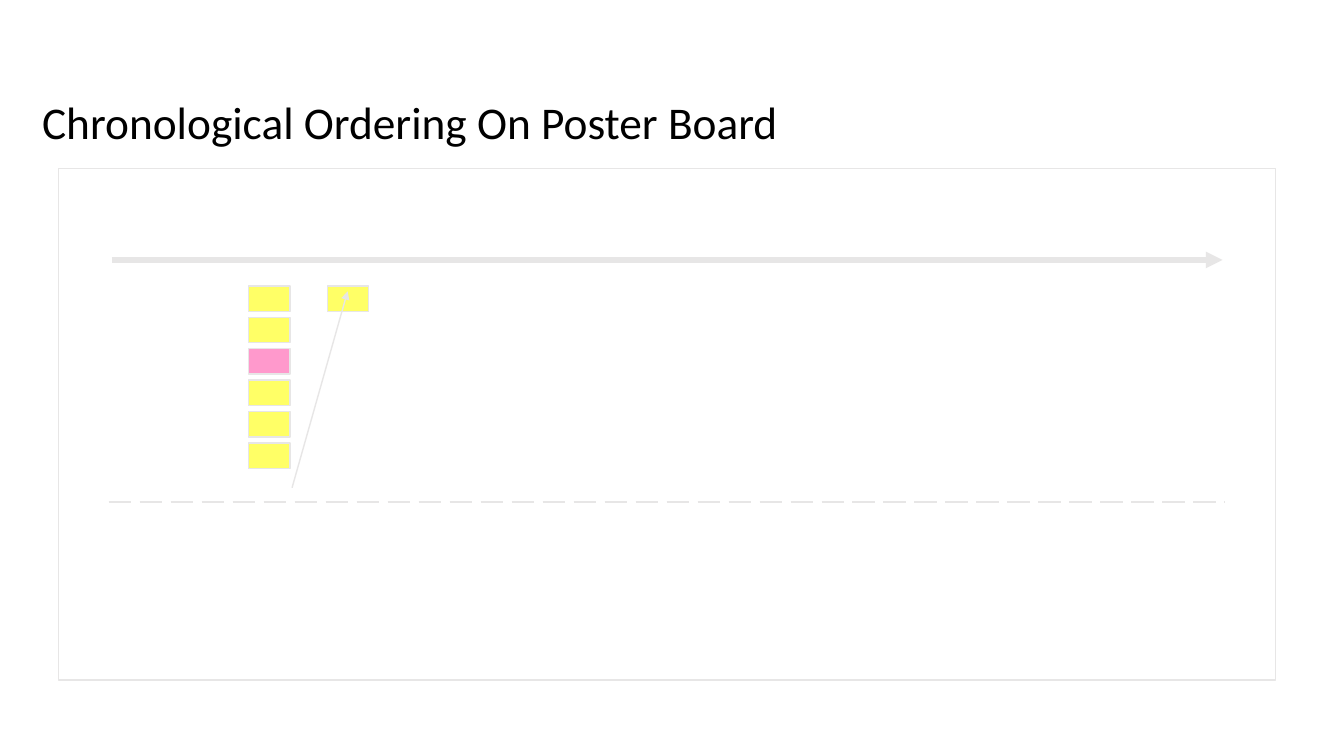
from dataclasses import dataclass

from lxml.etree import SubElement
from pptx import Presentation
from pptx.dml.color import RGBColor
from pptx.enum.dml import MSO_LINE
from pptx.enum.shapes import MSO_CONNECTOR, MSO_SHAPE
from pptx.enum.text import MSO_ANCHOR, PP_ALIGN
from pptx.oxml.ns import qn
from pptx.util import Cm, Pt


@dataclass(frozen=True)
class Theme:
    font: str = "Calibri"
    title_size: float = 32.4
    text: str = "000000"
    board: str = "FFFFFF"
    outline: str = "E7E6E6"
    yellow: str = "FFFF66"
    pink: str = "FF99CC"


@dataclass(frozen=True)
class Box:
    left: float
    top: float
    width: float
    height: float


THEME = Theme()


def add_text(slide, box, text, *, size, color, font=THEME.font,
             anchor=MSO_ANCHOR.BOTTOM, align=PP_ALIGN.LEFT):
    shape = slide.shapes.add_textbox(
        Cm(box.left), Cm(box.top), Cm(box.width), Cm(box.height))
    frame = shape.text_frame
    frame.word_wrap = True
    frame.vertical_anchor = anchor
    paragraph = frame.paragraphs[0]
    paragraph.alignment = align
    run = paragraph.add_run()
    run.text = text
    run.font.name = font
    run.font.size = Pt(size)
    run.font.color.rgb = RGBColor.from_string(color)


def add_rectangle(slide, box, fill):
    shape = slide.shapes.add_shape(
        MSO_SHAPE.RECTANGLE,
        Cm(box.left), Cm(box.top), Cm(box.width), Cm(box.height))
    shape.shadow.inherit = False
    shape.fill.solid()
    shape.fill.fore_color.rgb = RGBColor.from_string(fill)
    shape.line.color.rgb = RGBColor.from_string(THEME.outline)
    shape.line.width = Pt(1)


def add_line(slide, box, start, end, *, width=1, dash=None, arrow=False):
    connector = slide.shapes.add_connector(
        MSO_CONNECTOR.STRAIGHT,
        Cm(box.left + start[0]), Cm(box.top + start[1]),
        Cm(box.left + end[0]), Cm(box.top + end[1]))
    line = connector.line
    line.color.rgb = RGBColor.from_string(THEME.outline)
    line.width = Pt(width)
    if dash:
        line.dash_style = dash
    properties = connector.element.spPr
    if arrow:
        SubElement(properties.find(qn("a:ln")), qn("a:tailEnd"), type="triangle")
    SubElement(properties, qn("a:effectLst"))


def add_title(slide, box):
    add_text(slide, box, "Chronological Ordering On Poster Board",
             size=THEME.title_size, color=THEME.text)


def add_note_columns(slide, box):
    note_width, note_height = 1.04, 0.64
    column_step, row_step = 1.98, 0.79
    columns = [
        [THEME.yellow] * 2 + [THEME.pink] + [THEME.yellow] * 3,
        [THEME.yellow],
    ]
    for column, fills in enumerate(columns):
        for row, fill in enumerate(fills):
            note = Box(box.left + column * column_step,
                       box.top + row * row_step, note_width, note_height)
            add_rectangle(slide, note, fill)
    add_line(slide, box, (1.09, 5.08), (2.49, 0.13), arrow=True)


def add_poster_board(slide, box):
    add_rectangle(slide, box, THEME.board)
    add_line(slide, box, (1.35, 2.31), (29.34, 2.31), width=4, arrow=True)
    add_line(slide, box, (1.27, 8.41), (29.41, 8.41),
             width=2, dash=MSO_LINE.LONG_DASH)
    add_note_columns(slide, Box(box.left + 4.8, box.top + 2.97, 3.02, 4.59))


def main():
    presentation = Presentation()
    presentation.slide_width = Cm(33.87)
    presentation.slide_height = Cm(19.05)
    slide = presentation.slides.add_slide(presentation.slide_layouts[6])
    add_title(slide, Box(0.81, 0.79, 33.06, 3.07))
    add_poster_board(slide, Box(1.47, 4.24, 30.68, 12.9))
    presentation.save("out.pptx")


if __name__ == "__main__":
    main()
